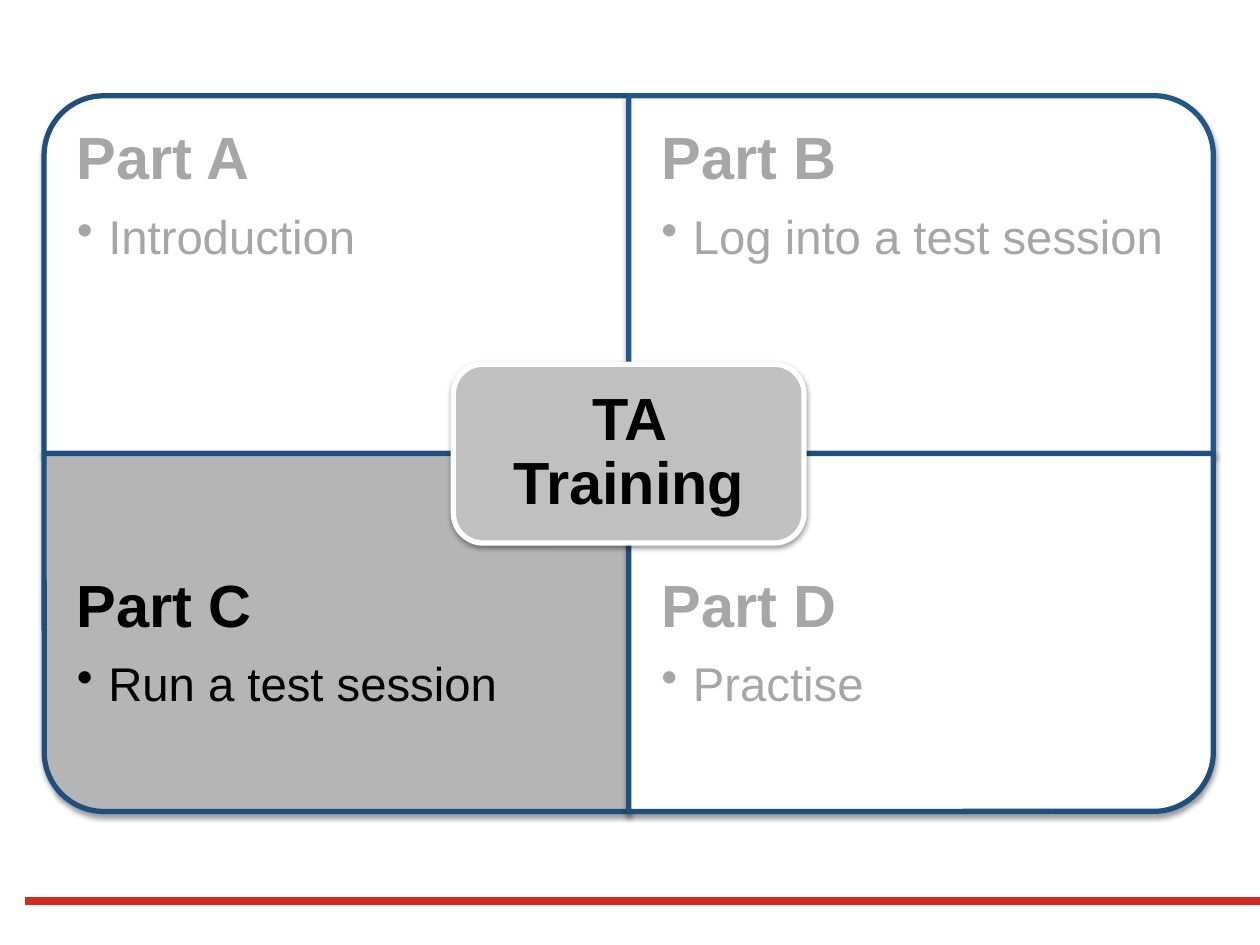
import pptx
import pptx.dml.color
import pptx.enum.shapes
import pptx.enum.text
import pptx.oxml
import pptx.oxml.ns
import pptx.util
from lxml import etree
from pptx.util import Inches, Pt

SHAPES = pptx.enum.shapes.MSO_SHAPE
PARTS = [
    ("Part A", "Introduction", 270, "FFFFFF", "1E4F7D", "A6A6A6"),
    ("Part B", "Log into a test session", 0, "FFFFFF", "21578A", "A6A6A6"),
    ("Part C", "Run a test session", 180, "B5B5B5", "1E4F7D", "000000"),
    ("Part D", "Practise", 90, "FFFFFF", "1E4F7D", "A6A6A6"),
]


def color(value):
    """Return the colour for a hex string."""
    return pptx.dml.color.RGBColor.from_string(value)


def set_effects(shape, shadow=False):
    """Give a shape or connector an empty effect list or a soft shadow."""
    effects = etree.SubElement(shape._element.spPr, pptx.oxml.ns.qn("a:effectLst"))
    if shadow:
        effects.append(pptx.oxml.parse_xml(
            f'<a:outerShdw {pptx.oxml.ns.nsdecls("a")} blurRad="{Pt(3.1)}" '
            f'dist="{Pt(1.6)}" dir="5400000" rotWithShape="0">'
            '<a:srgbClr val="000000"><a:alpha val="38000"/></a:srgbClr></a:outerShdw>'))


def add_panel(slide, kind, left, top, width, height, fill, line, rotation=0):
    """Add a shadowed panel that covers the given box after a quarter-turn rotation."""
    if rotation % 180:
        left, top = left + (width - height) / 2, top + (height - width) / 2
        width, height = height, width
    shape = slide.shapes.add_shape(
        kind, Inches(left), Inches(top), Inches(width), Inches(height))
    shape.rotation = rotation
    shape.fill.solid()
    shape.fill.fore_color.rgb = color(fill)
    shape.line.color.rgb = color(line)
    shape.line.width = Pt(3)
    set_effects(shape, shadow=True)


def add_text_frame(slide, left, top, width, height, margin):
    """Add a wrapping text box with equal margins and return its frame."""
    box = slide.shapes.add_textbox(Inches(left), Inches(top), Inches(width), Inches(height))
    frame = box.text_frame
    frame.word_wrap = True
    frame.margin_left = frame.margin_right = Inches(margin)
    frame.margin_top = frame.margin_bottom = Inches(margin)
    return frame


def set_paragraph(paragraph, text, size, bold, font_color, space_after):
    """Write one paragraph and format it."""
    paragraph.text = text
    paragraph.line_spacing = 0.9
    paragraph.space_after = Pt(space_after)
    font = paragraph.runs[0].font
    font.name = "Arial"
    font.size = Pt(size)
    font.bold = bold
    font.color.rgb = color(font_color)


def add_bullet(paragraph):
    """Turn a paragraph into a bullet with a hanging indent."""
    properties = paragraph._p.get_or_add_pPr()
    properties.set("marL", str(Inches(0.25)))
    properties.set("indent", str(-Inches(0.25)))
    bullet = etree.SubElement(properties, pptx.oxml.ns.qn("a:buChar"))
    bullet.set("char", "•")


def add_matrix(slide, left, top, width, height):
    """Place the four training parts and the centre label in the given box."""
    cell_width, cell_height = width / 2, height / 2
    text_height = cell_height * 0.75
    for index, (title, topic, rotation, fill, line, font_color) in enumerate(PARTS):
        row, column = divmod(index, 2)
        cell_left, cell_top = left + column * cell_width, top + row * cell_height
        add_panel(slide, SHAPES.ROUND_1_RECTANGLE, cell_left, cell_top,
                  cell_width, cell_height, fill, line, rotation)
        text_top = cell_top + row * (cell_height - text_height)
        frame = add_text_frame(slide, cell_left, text_top, cell_width, text_height, 0.26)
        set_paragraph(frame.paragraphs[0], title, 34, True, font_color, 12)
        paragraph = frame.add_paragraph()
        paragraph.level = 1
        set_paragraph(paragraph, topic, 27, False, font_color, 4)
        add_bullet(paragraph)
    label_width, label_height = cell_width * 0.6, cell_height / 2
    add_label(slide, left + (width - label_width) / 2, top + (height - label_height) / 2,
              label_width, label_height)


def add_label(slide, left, top, width, height):
    """Place the centre label in the given box."""
    add_panel(slide, SHAPES.ROUNDED_RECTANGLE, left, top, width, height, "C0C0C0", "FFFFFF")
    inset = 0.07
    frame = add_text_frame(slide, left + inset, top + inset,
                           width - 2 * inset, height - 2 * inset, 0.14)
    frame.vertical_anchor = pptx.enum.text.MSO_ANCHOR.MIDDLE
    paragraph = frame.paragraphs[0]
    set_paragraph(paragraph, "TA Training", 34, True, "000000", 12)
    paragraph.alignment = pptx.enum.text.PP_ALIGN.CENTER


def add_footer_line(slide, left, top, width):
    """Draw the red line at the foot of the slide."""
    connector = slide.shapes.add_connector(
        pptx.enum.shapes.MSO_CONNECTOR.STRAIGHT,
        Inches(left), Inches(top), Inches(left + width), Inches(top))
    connector.line.color.rgb = color("D52B1E")
    connector.line.width = Pt(4.2)
    set_effects(connector)


def main():
    """Build the slide and save it."""
    presentation = pptx.Presentation()
    presentation.slide_width = Inches(10)
    presentation.slide_height = Inches(7.5)
    slide = presentation.slides.add_slide(presentation.slide_layouts[6])
    add_footer_line(slide, 0.2, 7.15, 9.8)
    add_matrix(slide, 0.35, 0.76, 9.28, 5.68)
    presentation.save("out.pptx")


if __name__ == "__main__":
    main()
